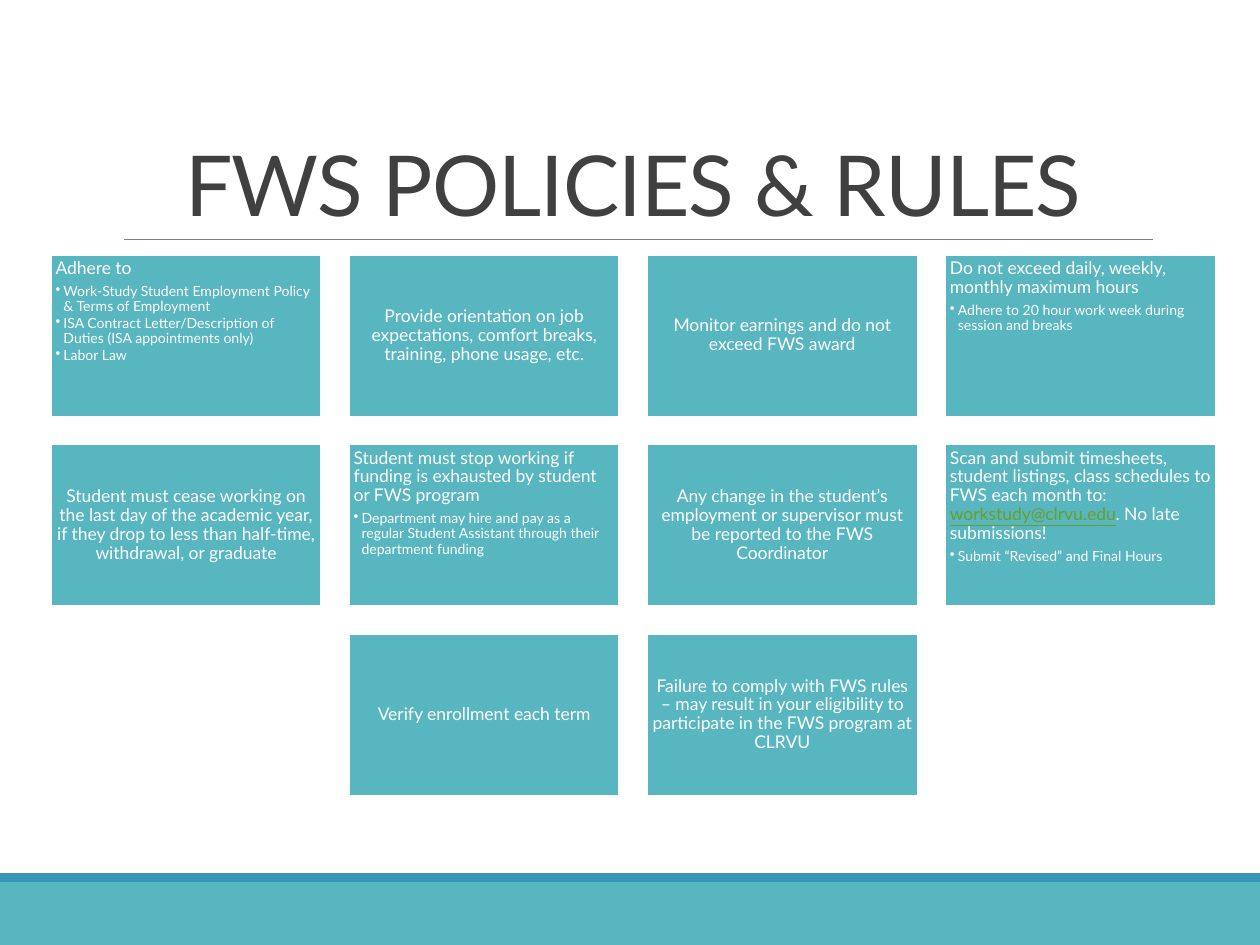
from dataclasses import dataclass

from lxml import etree
from pptx import Presentation
from pptx.dml.color import RGBColor
from pptx.enum import shapes, text
from pptx.oxml import ns
from pptx.util import Cm, Pt


@dataclass(frozen=True)
class Theme:
    font: str = "Lato"
    teal: str = "58B6C0"
    blue: str = "3494BA"
    rule: str = "808080"
    title: str = "404040"
    white: str = "FFFFFF"
    link: str = "6B9F25"
    title_size: float = 48
    body_size: float = 10
    bullet_size: float = 8


theme = Theme()


def add_rect(left, top, width, height, color):
    """Add a plain filled rectangle, measured in centimetres."""
    sp = s.shapes.add_shape(shapes.MSO_SHAPE.RECTANGLE,
                            Cm(left), Cm(top), Cm(width), Cm(height))
    sp.shadow.inherit = False
    sp.fill.solid()
    sp.fill.fore_color.rgb = RGBColor.from_string(color)
    sp.line.fill.background()
    return sp


def add_run(p, words, size, color):
    r = p.add_run()
    r.text = words
    r.font.name = theme.font
    r.font.size = Pt(size)
    r.font.color.rgb = RGBColor.from_string(color)
    return r


# Each card is a list of lead runs and a list of bullets.
rows = [
    [
        (["Adhere to"],
         ["Work-Study Student Employment Policy & Terms of Employment",
          "ISA Contract Letter/Description of Duties (ISA appointments only)",
          "Labor Law"]),
        (["Provide orientation on job expectations, comfort breaks, "
          "training, phone usage, etc."], []),
        (["Monitor earnings and do not exceed FWS award"], []),
        (["Do not exceed daily, weekly, monthly maximum hours"],
         ["Adhere to 20 hour work week during session and breaks"]),
    ],
    [
        (["Student must cease working on the last day of the academic year, "
          "if they drop to less than half-time, withdrawal, or graduate"], []),
        (["Student must stop working if funding is exhausted by student "
          "or FWS program"],
         ["Department may hire and pay as a regular Student Assistant "
          "through their department funding"]),
        (["Any change in the student’s employment or supervisor must be "
          "reported to the FWS Coordinator"], []),
        (["Scan and submit timesheets, student listings, class schedules "
          "to FWS each month to: ",
          "workstudy@clrvu.edu",
          ". No late submissions!"],
         ["Submit “Revised” and Final Hours"]),
    ],
    [
        (["Verify enrollment each term"], []),
        (["Failure to comply with FWS rules – may result in your eligibility "
          "to participate in the FWS program at CLRVU"], []),
    ],
]

prs = Presentation()
prs.slide_width, prs.slide_height = Cm(25.4), Cm(19.05)
s = prs.slides.add_slide(prs.slide_layouts[5])

# Footer bands and title rule
add_rect(0, 17.78, 25.4, 1.27, theme.teal)
add_rect(0, 17.6, 25.4, 0.18, theme.blue)
rule = s.shapes.add_connector(shapes.MSO_CONNECTOR.STRAIGHT,
                              Cm(2.49), Cm(4.83), Cm(23.24), Cm(4.83))
rule.line.color.rgb = RGBColor.from_string(theme.rule)
rule.line.width = Pt(0.5)
etree.SubElement(rule._element.spPr, ns.qn("a:effectLst"))

# Title
title = s.shapes.title
title.left, title.top, title.width, title.height = Cm(2.29), Cm(0.79), Cm(20.96), Cm(4.04)
tf = title.text_frame
tf.auto_size = text.MSO_AUTO_SIZE.NONE
tf.vertical_anchor = text.MSO_ANCHOR.BOTTOM
p = tf.paragraphs[0]
p.alignment = text.PP_ALIGN.CENTER
p.line_spacing = 0.85
r = add_run(p, "FWS POLICIES & RULES", theme.title_size, theme.title)
r.font._element.set("spc", "-50")

# Cards: four columns, with a short row centred
columns, left, top = 4, 1.02, 5.13
step_x, step_y = 6.01, 3.82
for row, cards in enumerate(rows):
    first = (columns - len(cards)) / 2
    for col, (lead, bullets) in enumerate(cards):
        sp = add_rect(left + (first + col) * step_x, top + row * step_y,
                      5.46, 3.28, theme.teal)
        sp.line.color.rgb = RGBColor.from_string(theme.white)
        sp.line.width = Pt(1.25)
        tf = sp.text_frame
        tf.word_wrap = True
        tf.margin_left = tf.margin_right = tf.margin_top = tf.margin_bottom = Cm(0.1)
        tf.vertical_anchor = text.MSO_ANCHOR.TOP if bullets else text.MSO_ANCHOR.MIDDLE

        p = tf.paragraphs[0]
        p.alignment = text.PP_ALIGN.LEFT if bullets else text.PP_ALIGN.CENTER
        p.line_spacing = 0.9
        p.space_after = Pt(3.5)
        for words in lead:
            is_link = "@" in words
            r = add_run(p, words, theme.body_size, theme.link if is_link else theme.white)
            r.font.underline = is_link

        for bullet in bullets:
            p = tf.add_paragraph()
            p.alignment = text.PP_ALIGN.LEFT
            p.level = 1
            p.line_spacing = 0.9
            p.space_after = Pt(1.2)
            pPr = p._p.get_or_add_pPr()
            pPr.set("marL", str(Cm(0.16)))
            pPr.set("indent", str(-Cm(0.16)))
            etree.SubElement(pPr, ns.qn("a:buChar"), char="•")
            add_run(p, bullet, theme.bullet_size, theme.white)

prs.save("out.pptx")
